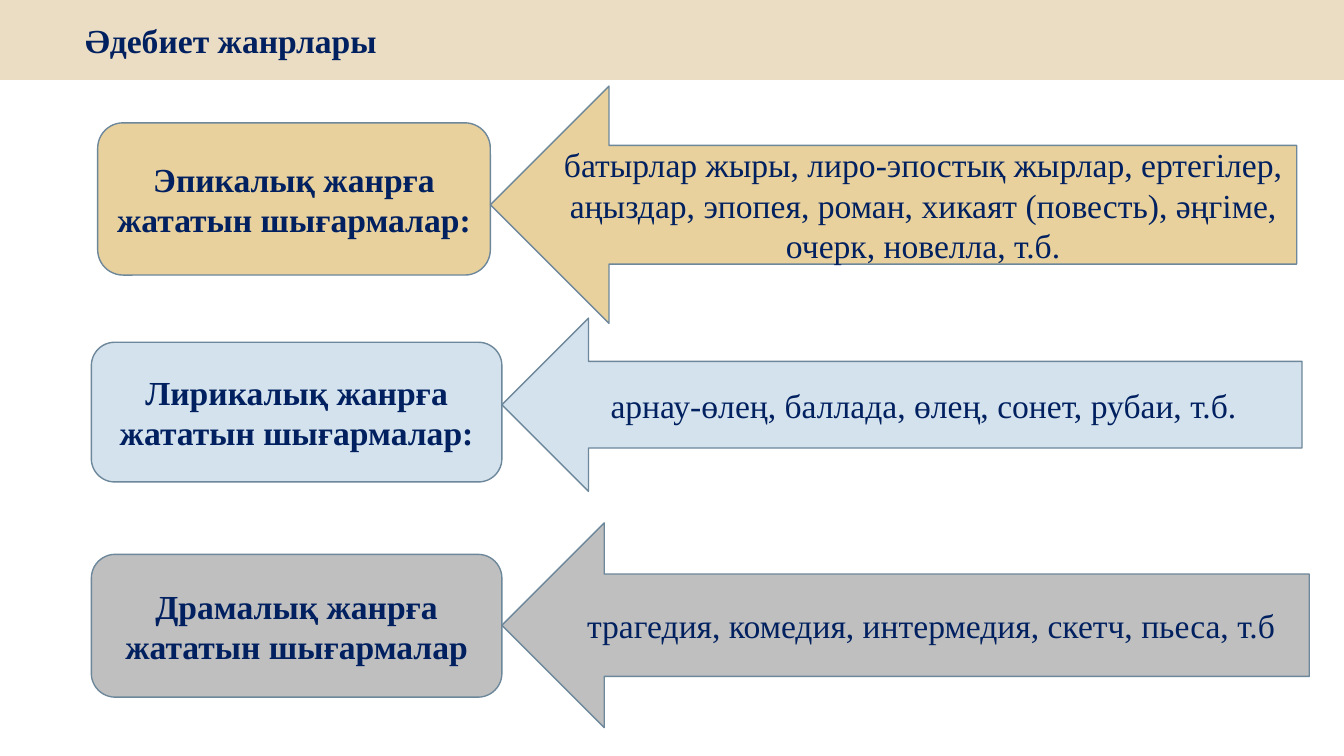
from dataclasses import dataclass

from pptx import Presentation
from pptx.dml.color import RGBColor
from pptx.enum.shapes import MSO_SHAPE as Preset
from pptx.enum.text import MSO_ANCHOR as Anchor, PP_ALIGN as Align
from pptx.util import Emu, Pt

EMU_PER_PX = 9525
BLANK_LAYOUT = 6


@dataclass(frozen=True)
class Theme:
    font: str = "Times New Roman"
    size: int = 24
    ink: str = "002060"
    outline: str = "6D879B"
    header: str = "EBDDC3"
    epic: str = "E8D19D"
    lyric: str = "D4E2ED"
    drama: str = "BFBFBF"


THEME = Theme()

# Fill, label, label box, examples, arrow box (left, top, width, height in px)
GENRES = [
    (THEME.epic, "Эпикалық жанрға жататын шығармалар:", (93, 117, 374, 145),
     "батырлар жыры, лиро-эпостық жырлар, ертегілер, аңыздар, эпопея, "
     "роман, хикаят (повесть), әңгіме, очерк, новелла, т.б.",
     (467, 82, 768, 226)),
    (THEME.lyric, "Лирикалық жанрға жататын шығармалар:", (87, 326, 391, 133),
     "арнау-өлең, баллада, өлең, сонет, рубаи, т.б.",
     (478, 303, 762, 165)),
    (THEME.drama, "Драмалық жанрға жататын шығармалар", (87, 528, 391, 136),
     "трагедия, комедия, интермедия, скетч, пьеса, т.б",
     (478, 498, 769, 195)),
]


def px(length):
    return Emu(length * EMU_PER_PX)


def set_format(target, values):
    for attribute, value in values.items():
        setattr(target, attribute, value)


def add_panel(slide, preset, box, fill, outlined=True):
    panel = slide.shapes.add_shape(preset, *map(px, box))
    panel.shadow.inherit = False
    panel.fill.solid()
    panel.fill.fore_color.rgb = RGBColor.from_string(fill)
    if outlined:
        panel.line.color.rgb = RGBColor.from_string(THEME.outline)
        panel.line.width = Pt(1)
    else:
        panel.line.fill.background()
    return panel


def write(panel, text, bold=False, align=Align.CENTER):
    frame = panel.text_frame
    set_format(frame, {"word_wrap": True, "vertical_anchor": Anchor.MIDDLE})
    paragraph = frame.paragraphs[0]
    paragraph.text = text
    paragraph.alignment = align
    set_format(paragraph.font,
               {"name": THEME.font, "size": Pt(THEME.size), "bold": bold})
    paragraph.font.color.rgb = RGBColor.from_string(THEME.ink)


def add_header(slide, title):
    header = add_panel(slide, Preset.RECTANGLE, (0, 0, 1280, 76),
                       THEME.header, outlined=False)
    header.text_frame.margin_left = px(81)
    write(header, title, bold=True, align=Align.LEFT)


def add_genre(slide, fill, label, label_box, examples, arrow_box):
    """Add a genre label and the arrow of examples pointing to it."""
    write(add_panel(slide, Preset.ROUNDED_RECTANGLE, label_box, fill),
          label, bold=True)
    write(add_panel(slide, Preset.LEFT_ARROW, arrow_box, fill), examples)


def main():
    deck = Presentation()
    set_format(deck, {"slide_width": px(1280), "slide_height": px(720)})
    slide = deck.slides.add_slide(deck.slide_layouts[BLANK_LAYOUT])
    add_header(slide, "Әдебиет жанрлары")
    for genre in GENRES:
        add_genre(slide, *genre)
    deck.save("out.pptx")


if __name__ == "__main__":
    main()
